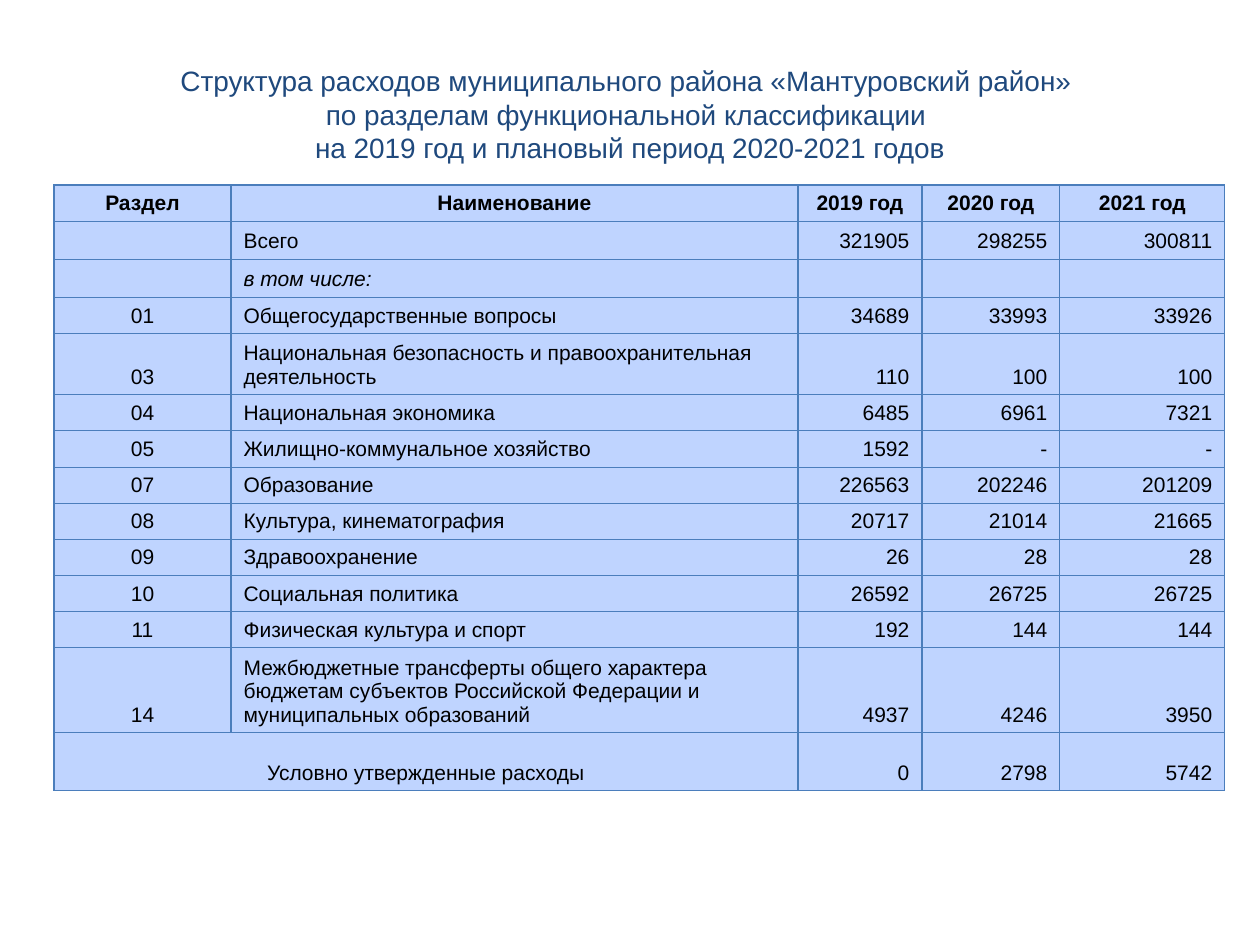
import lxml.etree
import pptx
import pptx.dml.color
import pptx.enum.text
import pptx.oxml.ns
import pptx.util

ALIGN = pptx.enum.text.PP_ALIGN
ANCHOR = pptx.enum.text.MSO_ANCHOR
EMU_PER_PX = 914400 // 126
FONT = "Arial"
BLACK = "000000"
NAVY = "1F497D"
PALE_BLUE = "BFD4FF"
BORDER_BLUE = "4B7EBC"

TITLE_LINES = [
    "Структура расходов муниципального района «Мантуровский район» ",
    "по разделам функциональной классификации ",
    "на 2019 год и плановый период 2020-2021 годов",
]
COLUMN_WIDTHS = [177, 567, 124, 138, 165]
LINE_ROW, TWO_LINE_ROW, THREE_LINE_ROW, TOTAL_ROW = 36, 61, 85, 58
ROW_HEIGHTS = (
    [LINE_ROW] * 4 + [TWO_LINE_ROW] + [LINE_ROW] * 7 + [THREE_LINE_ROW, TOTAL_ROW]
)
COLUMN_ALIGN = [ALIGN.CENTER, ALIGN.LEFT, ALIGN.RIGHT, ALIGN.RIGHT, ALIGN.RIGHT]
SUBHEADING = "в том числе:"
EXPENSES = [
    ["Раздел", "Наименование", "2019 год", "2020 год", "2021 год"],
    ["", "Всего", "321905", "298255", "300811"],
    ["", SUBHEADING, "", "", ""],
    ["01", "Общегосударственные вопросы", "34689", "33993", "33926"],
    ["03", "Национальная безопасность и правоохранительная деятельность",
     "110", "100", "100"],
    ["04", "Национальная экономика", "6485", "6961", "7321"],
    ["05", "Жилищно-коммунальное хозяйство", "1592", "-", "-"],
    ["07", "Образование", "226563", "202246", "201209"],
    ["08", "Культура, кинематография", "20717", "21014", "21665"],
    ["09", "Здравоохранение", "26", "28", "28"],
    ["10", "Социальная политика", "26592", "26725", "26725"],
    ["11", "Физическая культура и спорт", "192", "144", "144"],
    ["14", "Межбюджетные трансферты общего характера бюджетам субъектов "
     "Российской Федерации и муниципальных образований", "4937", "4246", "3950"],
    ["Условно утвержденные расходы", "", "0", "2798", "5742"],
]


def px(length):
    return pptx.util.Emu(length * EMU_PER_PX)


def color(value):
    return pptx.dml.color.RGBColor.from_string(value)


def add_run(paragraph, text, size, ink, bold=False, italic=False):
    run = paragraph.add_run()
    run.text = text
    run.font.name = FONT
    run.font.size = pptx.util.Pt(size)
    run.font.bold = bold
    run.font.italic = italic
    run.font.color.rgb = color(ink)


def add_title(slide):
    title = slide.shapes.title
    title.left, title.top, title.width, title.height = map(px, (63, 35, 1134, 158))
    title.text_frame.vertical_anchor = ANCHOR.MIDDLE
    heading = title.text_frame.paragraphs[0]
    heading.alignment = ALIGN.CENTER
    for index, line in enumerate(TITLE_LINES):
        if index:
            heading.add_line_break()
        add_run(heading, line, 16, NAVY)


def add_borders(cell):
    qn = pptx.oxml.ns.qn
    properties = cell._tc.get_or_add_tcPr()
    for side in ("a:lnL", "a:lnR", "a:lnT", "a:lnB"):
        border = lxml.etree.SubElement(
            properties, qn(side), w=str(pptx.util.Pt(0.75))
        )
        fill = lxml.etree.SubElement(border, qn("a:solidFill"))
        lxml.etree.SubElement(fill, qn("a:srgbClr"), val=BORDER_BLUE)


def fill_cell(cell, text, alignment, header):
    add_borders(cell)
    cell.fill.solid()
    cell.fill.fore_color.rgb = color(PALE_BLUE)
    cell.vertical_anchor = ANCHOR.MIDDLE if header else ANCHOR.BOTTOM
    entry = cell.text_frame.paragraphs[0]
    entry.alignment = alignment
    if text:
        add_run(entry, text, 12, BLACK, bold=header, italic=text == SUBHEADING)
    else:
        lxml.etree.SubElement(entry._p, pptx.oxml.ns.qn("a:endParaRPr"), sz="1200")


def add_expense_table(slide):
    expenses = slide.shapes.add_table(
        len(EXPENSES), len(COLUMN_WIDTHS), px(54), px(185),
        px(sum(COLUMN_WIDTHS)), px(sum(ROW_HEIGHTS)),
    ).table
    expenses.first_row = False
    expenses.horz_banding = False
    for column, width in zip(expenses.columns, COLUMN_WIDTHS):
        column.width = px(width)
    for row, height in zip(expenses.rows, ROW_HEIGHTS):
        row.height = px(height)
    for row_index, entries in enumerate(EXPENSES):
        header = row_index == 0
        for column_index, text in enumerate(entries):
            alignment = ALIGN.CENTER if header else COLUMN_ALIGN[column_index]
            fill_cell(expenses.cell(row_index, column_index), text, alignment, header)
    last = len(EXPENSES) - 1
    expenses.cell(last, 0).merge(expenses.cell(last, 1))


def main():
    presentation = pptx.Presentation()
    presentation.slide_width = px(1260)
    presentation.slide_height = px(945)
    slide = presentation.slides.add_slide(presentation.slide_layouts[5])
    add_title(slide)
    add_expense_table(slide)
    presentation.save("out.pptx")


if __name__ == "__main__":
    main()
